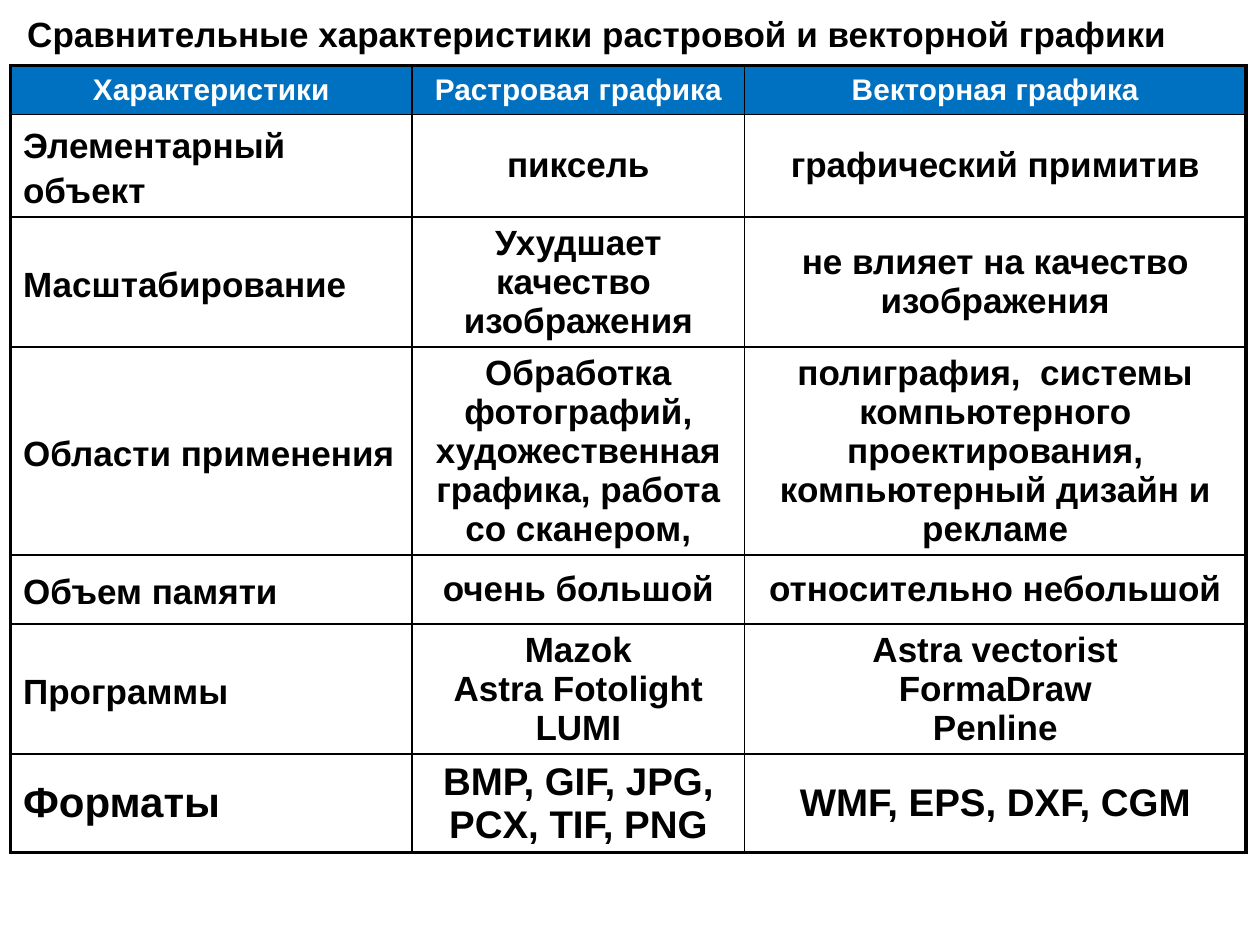
from lxml.etree import SubElement
from pptx import Presentation
from pptx.dml.color import RGBColor
from pptx.enum.text import MSO_ANCHOR, PP_ALIGN
from pptx.oxml.ns import qn
from pptx.util import Pt

TITLE = "Сравнительные характеристики растровой и векторной графики"
HEADER = ["Характеристики", "Растровая графика", "Векторная графика"]
# Each line break starts a new paragraph.
BODY = [
    ["Элементарный объект", "пиксель", "графический примитив"],
    ["Масштабирование", "Ухудшает качество  изображения",
     "не влияет на качество изображения"],
    ["Области применения",
     "Обработка фотографий, художественная графика, работа со сканером,",
     "полиграфия,  системы компьютерного проектирования, "
     "компьютерный дизайн и рекламе"],
    ["Объем памяти", "очень большой", "относительно небольшой"],
    ["Программы", "Mazok\nAstra Fotolight\nLUMI",
     "Astra vectorist\nFormaDraw\nPenline"],
    ["Форматы", "BMP, GIF, JPG, PCX, TIF, PNG", "WMF, EPS, DXF, CGM"],
]
ROWS = [HEADER] + BODY
COLUMN_WIDTHS = [229.5, 190, 286.5]
ROW_HEIGHTS = [28, 58, 74, 119, 39.5, 74, 56]
COLORS = {"header": "0070C0", "light": "FFFFFF", "dark": "000000"}
THIN, THICK = 1, 2.25
LAST_ROW, LAST_COLUMN = len(ROWS) - 1, len(HEADER) - 1


def write_paragraph(paragraph, text, size, color, **formats):
    for name, value in formats.items():
        setattr(paragraph, name, value)
    run = paragraph.add_run()
    run.text = text
    font = {"name": "Arial", "size": Pt(size), "bold": True}
    for name, value in font.items():
        setattr(run.font, name, value)
    run.font.color.rgb = RGBColor.from_string(COLORS[color])


def set_borders(cell, widths):
    properties = cell._tc.get_or_add_tcPr()
    for position, (side, width) in enumerate(widths.items()):
        line = properties.makeelement(qn(f"a:ln{side}"), {"w": str(Pt(width))})
        fill = SubElement(line, qn("a:solidFill"))
        SubElement(fill, qn("a:srgbClr"), val=COLORS["dark"])
        properties.insert(position, line)


def text_size(row, column):
    if row == 0:
        return 17
    if row == LAST_ROW:
        return 24 if column == 0 else 22
    return 20


def paragraph_formats(row, column, size):
    formats = {"alignment": PP_ALIGN.CENTER, "space_before": Pt(size * 0.2)}
    if row > 0 and column == 0:
        formats["alignment"] = PP_ALIGN.JUSTIFY if row == 1 else PP_ALIGN.LEFT
        if row < LAST_ROW:
            formats.update(line_spacing=1.15, space_before=Pt(4.8))
    if row == LAST_ROW - 1 and column > 0:
        formats["space_before"] = Pt(0)
    return formats


def fill_cell(cell, row, column, text):
    cell.vertical_anchor = MSO_ANCHOR.MIDDLE
    cell.fill.solid()
    cell.fill.fore_color.rgb = RGBColor.from_string(
        COLORS["header" if row == 0 else "light"])
    set_borders(cell, {
        "L": THICK if column == 0 else THIN,
        "R": THICK if column == LAST_COLUMN else THIN,
        "T": THICK if row == 0 else THIN,
        "B": THICK if row == LAST_ROW else THIN,
    })
    size = text_size(row, column)
    formats = paragraph_formats(row, column, size)
    frame = cell.text_frame
    for index, line in enumerate(text.split("\n")):
        paragraph = frame.add_paragraph() if index else frame.paragraphs[0]
        write_paragraph(paragraph, line, size,
                        "light" if row == 0 else "dark", **formats)


presentation = Presentation()
presentation.slide_width, presentation.slide_height = Pt(720), Pt(540)
slide = presentation.slides.add_slide(presentation.slide_layouts[6])

table = slide.shapes.add_table(
    len(ROWS), len(HEADER), Pt(6), Pt(37.5),
    Pt(sum(COLUMN_WIDTHS)), Pt(sum(ROW_HEIGHTS))).table
for column, width in zip(table.columns, COLUMN_WIDTHS):
    column.width = Pt(width)
for row, height in zip(table.rows, ROW_HEIGHTS):
    row.height = Pt(height)
for row_index, texts in enumerate(ROWS):
    for column_index, text in enumerate(texts):
        fill_cell(table.cell(row_index, column_index),
                  row_index, column_index, text)

title = slide.shapes.add_textbox(Pt(8.5), Pt(3.6), Pt(705.5), Pt(34))
title.text_frame.word_wrap = True
write_paragraph(title.text_frame.paragraphs[0], TITLE, 20, "dark")

presentation.save("out.pptx")
